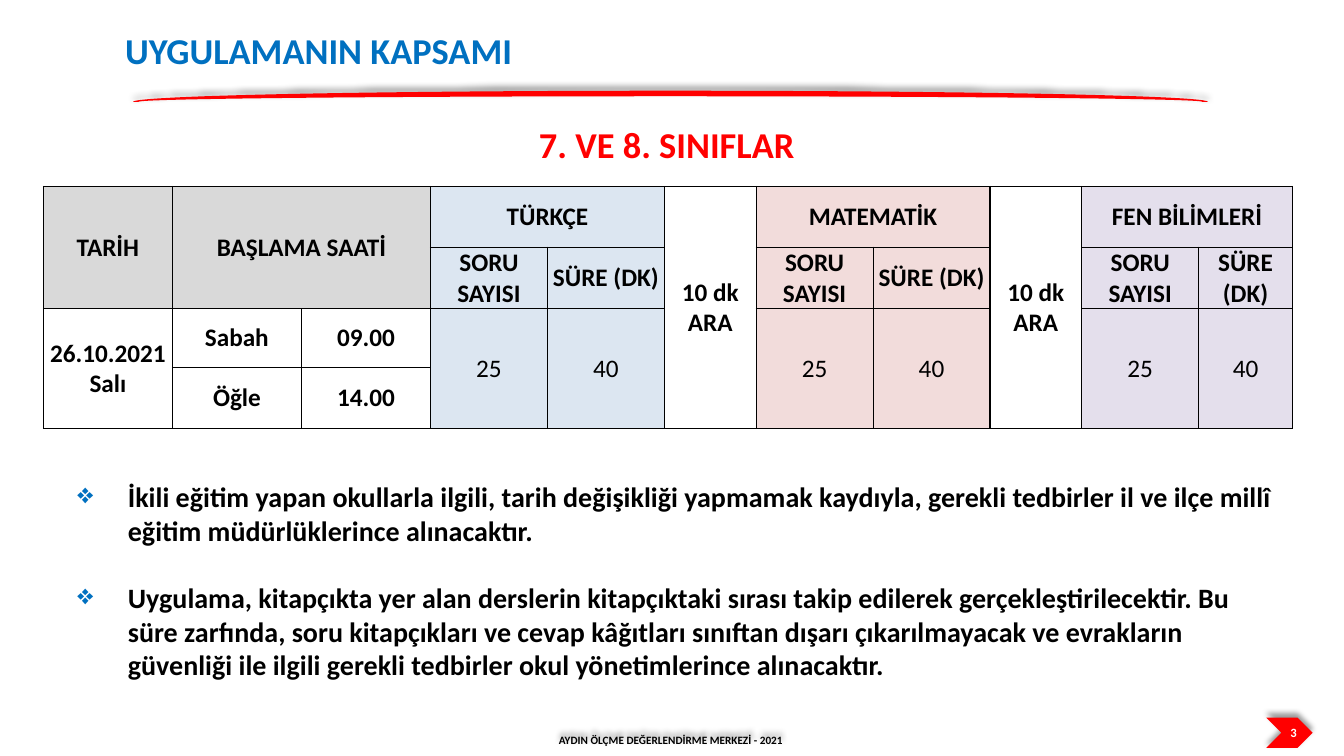
from lxml import etree
from pptx import Presentation
from pptx.dml.color import RGBColor
from pptx.enum.shapes import MSO_SHAPE as Shape
from pptx.enum.text import MSO_ANCHOR as Anchor, PP_ALIGN as Align
from pptx.oxml.ns import qn
from pptx.util import Inches, Pt

BLACK, WHITE, RED, BLUE = "000000", "FFFFFF", "FF0000", "0070C0"
GREY = "D9D9D9"
FONT = "Calibri"

COLUMN_WIDTHS = [1.28, 1.28, 1.28, 1.16, 1.16, 0.91, 1.16, 1.16, 0.91, 1.16, 0.93]
ROW_HEIGHTS = [0.6, 0.6, 0.58, 0.58]
SUBJECTS = [("TÜRKÇE", 3, "DCE6F1"), ("MATEMATİK", 6, "F2DCDB"),
            ("FEN BİLİMLERİ", 9, "E4DFEC")]
BREAK_COLUMNS = [5, 8]
THICK_COLUMN_EDGES = {0, 1, 3, 5, 6, 8, 9, 11}
THICK_ROW_EDGES = {0, 4}

NOTES = [
    "İkili eğitim yapan okullarla ilgili, tarih değişikliği yapmamak kaydıyla, "
    "gerekli tedbirler il ve ilçe millî eğitim müdürlüklerince alınacaktır.",
    "Uygulama, kitapçıkta yer alan derslerin kitapçıktaki sırası takip edilerek "
    "gerçekleştirilecektir. Bu süre zarfında, soru kitapçıkları ve cevap kâğıtları "
    "sınıftan dışarı çıkarılmayacak ve evrakların güvenliği ile ilgili gerekli "
    "tedbirler okul yönetimlerince alınacaktır.",
]


def rgb(value):
    return RGBColor.from_string(value)


def add_child(parent, tag, **attributes):
    return etree.SubElement(parent, qn(tag), attributes)


def add_color(parent, value):
    return add_child(parent, "a:srgbClr", val=value)


def format_text(paragraph, size, color, bold=True, align=Align.LEFT):
    paragraph.alignment = align
    for run in paragraph.runs:
        run.font.name = FONT
        run.font.size = Pt(size)
        run.font.bold = bold
        run.font.color.rgb = rgb(color)


def add_label(slide, box, text, size, color, anchor=Anchor.TOP):
    label = slide.shapes.add_textbox(*map(Inches, box))
    frame = label.text_frame
    frame.word_wrap = True
    frame.vertical_anchor = anchor
    frame.text = text
    format_text(frame.paragraphs[0], size, color, align=Align.CENTER)
    return label


def cast_shadow(shape):
    """Give the shape a soft shadow that falls upwards."""
    shape.shadow.inherit = False
    effects = shape._element.spPr.find(qn("a:effectLst"))
    shadow = add_child(effects, "a:outerShdw", blurRad=str(Pt(4)), dist=str(Pt(3)),
                       dir="16200000", algn="b", rotWithShape="0")
    add_child(add_color(shadow, BLACK), "a:alpha", val="40000")


def add_red_shape(slide, kind, box):
    shape = slide.shapes.add_shape(kind, *map(Inches, box))
    shape.fill.solid()
    shape.fill.fore_color.rgb = rgb(RED)
    shape.line.fill.background()
    cast_shadow(shape)


def add_heading(slide, left, top):
    title = slide.shapes.title
    title.left, title.top = Inches(left), Inches(top)
    title.width, title.height = Inches(4.74), Inches(0.57)
    frame = title.text_frame
    frame.text = "UYGULAMANIN KAPSAMI"
    frame.word_wrap = True
    frame.vertical_anchor = Anchor.TOP
    format_text(frame.paragraphs[0], 26, BLUE)
    add_red_shape(slide, Shape.BLOCK_ARC, (left + 0.18, top + 0.67, 10.66, 0.22))


def add_footer(slide, top):
    add_red_shape(slide, Shape.CHEVRON, (12.56, top, 0.46, 0.3))
    add_label(slide, (12.56, top + 0.02, 0.54, 0.25), "3", 9, WHITE)
    owner = add_label(slide, (4.09, top + 0.11, 5.13, 0.22),
                      "AYDIN ÖLÇME DEĞERLENDİRME MERKEZİ - 2021", 8, BLACK, Anchor.MIDDLE)
    cast_shadow(owner)


def draw_borders(cell, row, column):
    """Rule the cell thickly on group edges and thinly elsewhere."""
    bottom, right = row + cell.span_height, column + cell.span_width
    edges = [("a:lnL", column in THICK_COLUMN_EDGES), ("a:lnR", right in THICK_COLUMN_EDGES),
             ("a:lnT", row in THICK_ROW_EDGES), ("a:lnB", bottom in THICK_ROW_EDGES)]
    properties = cell._tc.get_or_add_tcPr()
    for tag, thick in edges:
        line = add_child(properties, tag, w=str(Pt(1 if thick else 0.5)))
        add_color(add_child(line, "a:solidFill"), BLACK)


def fill_cell(table, row, column, text, fill=None, rows=1, columns=1, bold=True):
    cell = table.cell(row, column)
    if rows > 1 or columns > 1:
        cell.merge(table.cell(row + rows - 1, column + columns - 1))
    cell.text_frame.text = text
    format_text(cell.text_frame.paragraphs[0], 18, BLACK, bold, Align.CENTER)
    cell.vertical_anchor = Anchor.MIDDLE
    cell.margin_left = cell.margin_right = cell.margin_top = Inches(0.01)
    cell.margin_bottom = 0
    draw_borders(cell, row, column)
    if fill:
        cell.fill.solid()
        cell.fill.fore_color.rgb = rgb(fill)
    else:
        cell.fill.background()


def add_schedule(slide, left, top):
    frame = slide.shapes.add_table(
        len(ROW_HEIGHTS), len(COLUMN_WIDTHS), Inches(left), Inches(top),
        Inches(sum(COLUMN_WIDTHS)), Inches(sum(ROW_HEIGHTS)))
    table = frame.table
    table.first_row = table.horz_banding = False
    for column, width in zip(table.columns, COLUMN_WIDTHS):
        column.width = Inches(width)
    for row, height in zip(table.rows, ROW_HEIGHTS):
        row.height = Inches(height)

    fill_cell(table, 0, 0, "TARİH", GREY, rows=2)
    fill_cell(table, 0, 1, "BAŞLAMA SAATİ", GREY, rows=2, columns=2)
    fill_cell(table, 2, 0, "26.10.2021 Salı", rows=2)
    for row, (session, start) in enumerate([("Sabah", "09.00"), ("Öğle", "14.00")], 2):
        fill_cell(table, row, 1, session)
        fill_cell(table, row, 2, start)
    for subject, first, tint in SUBJECTS:
        fill_cell(table, 0, first, subject, tint, columns=2)
        for column, (measure, value) in enumerate(
                [("SORU SAYISI", "25"), ("SÜRE (DK)", "40")], first):
            fill_cell(table, 1, column, measure, tint)
            fill_cell(table, 2, column, value, tint, rows=2, bold=False)
    for column in BREAK_COLUMNS:
        fill_cell(table, 0, column, "10 dk ARA", rows=4)


def add_bullet(paragraph):
    properties = paragraph._p.get_or_add_pPr()
    properties.set("marL", str(Inches(0.5)))
    properties.set("indent", str(-Inches(0.5)))
    add_color(add_child(properties, "a:buClr"), BLUE)
    add_child(properties, "a:buChar", char="❖")


def add_notes(slide, box):
    frame = slide.shapes.add_textbox(*map(Inches, box)).text_frame
    frame.word_wrap = True
    for index, note in enumerate(NOTES):
        paragraph = frame.add_paragraph() if index else frame.paragraphs[0]
        paragraph.text = note
        add_bullet(paragraph)
        if index:
            paragraph.space_before = Pt(24)
        format_text(paragraph, 20, BLACK)


def main():
    presentation = Presentation()
    presentation.slide_width, presentation.slide_height = Inches(13.33), Inches(7.5)
    slide = presentation.slides.add_slide(presentation.slide_layouts[5])
    add_footer(slide, 7.12)
    add_heading(slide, 1.14, 0.23)
    add_schedule(slide, 0.43, 1.85)
    add_label(slide, (5.02, 1.16, 3.19, 0.57), "7. VE 8. SINIFLAR", 26, RED)
    add_notes(slide, (0.67, 4.71, 12.16, 1.8))
    presentation.save("out.pptx")


if __name__ == "__main__":
    main()
